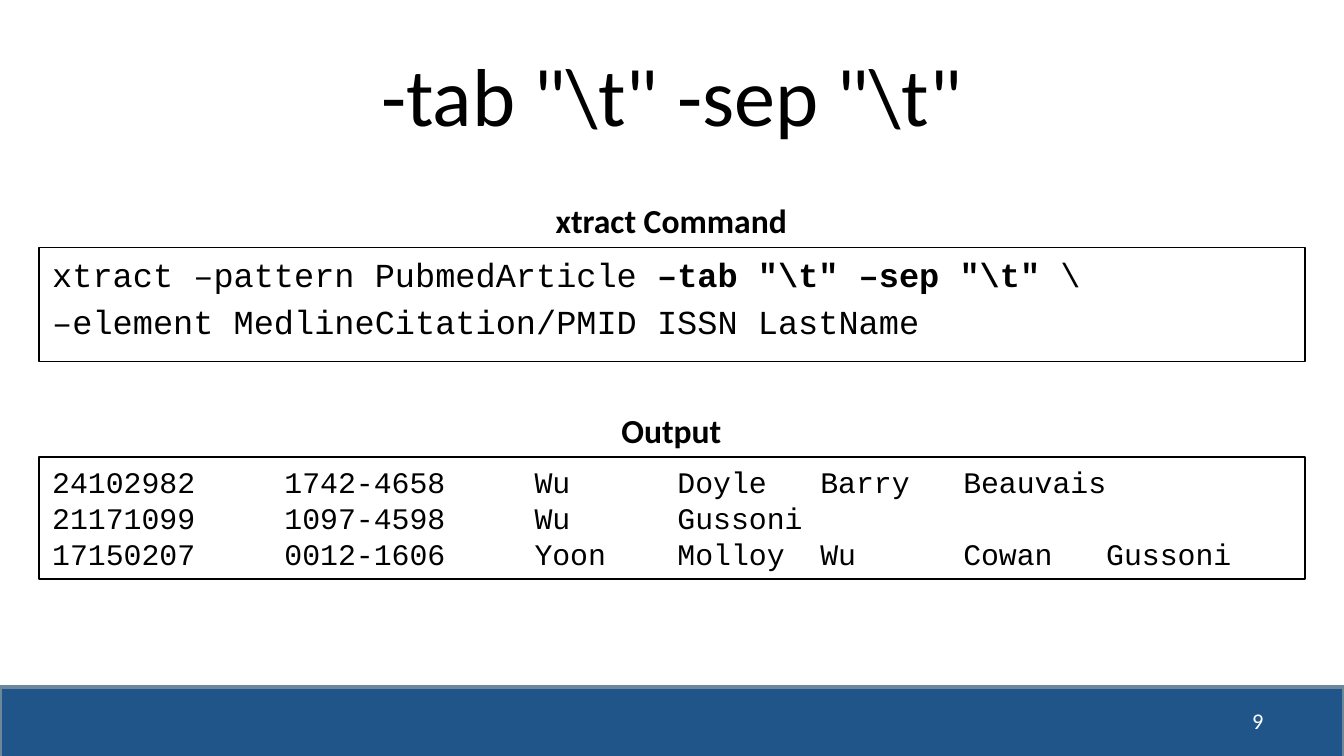
"""Build the slide that shows an xtract command and its tab-separated output."""
from dataclasses import dataclass

from lxml import etree
from pptx import Presentation
from pptx import util as u
from pptx.dml.color import RGBColor
from pptx.enum import shapes, text
from pptx.oxml.ns import qn

W = 10
H = W * 9 / 16
MARGIN = 0.29
BLACK, WHITE, BLUE, SLATE = "000000", "FFFFFF", "20558A", "6D879B"
SANS, MONO = "Calibri", "Courier New"
ALIGN, ANCHOR = text.PP_ALIGN, text.MSO_ANCHOR
CHAR = 9.57 / 72
COLUMNS = (13, 27, 35, 43, 51, 59)


@dataclass(frozen=True)
class Panel:
    heading: str
    top: float
    height: float
    lines: tuple
    size: int
    fill: str = ""
    gap: float = 0
    tabs: tuple = ()


PANELS = (
    Panel("xtract Command", 1.84, 0.85, (
        (("xtract –pattern PubmedArticle ", False),
         (r'–tab "\t" –sep "\t" ', True), ("\\", False)),
        (("–element MedlineCitation/PMID ISSN LastName", False),),
    ), 18, fill=WHITE, gap=3.6),
    Panel("Output", 3.4, 0.91, tuple((("\t".join(row.split()), False),) for row in (
        "24102982 1742-4658 Wu Doyle Barry Beauvais",
        "21171099 1097-4598 Wu Gussoni",
        "17150207 0012-1606 Yoon Molloy Wu Cowan Gussoni",
    )), 16, tabs=COLUMNS),
)


def rgb(value: str) -> RGBColor:
    return RGBColor.from_string(value)


def box(left: float, top: float, width: float, height: float) -> tuple:
    return tuple(u.Inches(v) for v in (left, top, width, height))


def style(p, size: float, font: str, color: str = BLACK, align=ALIGN.LEFT, bold=None) -> None:
    p.alignment = align
    f = p.font
    f.size, f.name, f.bold = u.Pt(size), font, bold
    f.color.rgb = rgb(color)


def add_rect(s, area: tuple, fill: str, line: str, weight: float):
    sp = s.shapes.add_shape(shapes.MSO_SHAPE.RECTANGLE, *box(*area))
    sp.shadow.inherit = False
    if fill:
        sp.fill.solid()
        sp.fill.fore_color.rgb = rgb(fill)
    else:
        sp.fill.background()
    sp.line.color.rgb = rgb(line)
    sp.line.width = u.Pt(weight)
    return sp


def add_label(s, area: tuple, words: str, size: float, color: str, align, anchor, bold=None) -> None:
    tf = s.shapes.add_textbox(*box(*area)).text_frame
    tf.word_wrap, tf.vertical_anchor = True, anchor
    p = tf.paragraphs[0]
    p.text = words
    style(p, size, SANS, color, align, bold)


def add_tabs(p, columns: tuple) -> None:
    tabs = etree.SubElement(p._p.get_or_add_pPr(), qn("a:tabLst"))
    for column in columns:
        etree.SubElement(tabs, qn("a:tab"), pos=str(u.Inches(column * CHAR)), algn="l")


def add_panel(s, panel: Panel) -> None:
    add_label(s, (3.95, panel.top - 0.4, 2.09, 0.4), panel.heading, 18, BLACK,
              ALIGN.CENTER, ANCHOR.TOP, True)
    area = (MARGIN, panel.top, W - 2 * MARGIN, panel.height)
    tf = add_rect(s, area, panel.fill, BLACK, 0.75).text_frame
    tf.word_wrap, tf.vertical_anchor = True, ANCHOR.TOP
    for i, line in enumerate(panel.lines):
        p = tf.add_paragraph() if i else tf.paragraphs[0]
        if i and panel.gap:
            p.space_before = u.Pt(panel.gap)
        if panel.tabs:
            add_tabs(p, panel.tabs)
        style(p, panel.size, MONO)
        for words, bold in line:
            r = p.add_run()
            r.text = words
            if bold:
                r.font.bold = True


def main() -> None:
    prs = Presentation()
    prs.slide_width, prs.slide_height = u.Inches(W), u.Inches(H)
    s = prs.slides.add_slide(prs.slide_layouts[5])
    title = s.shapes.title
    title.left, title.top, title.width, title.height = box(0.5, 0.23, W - 1, 0.94)
    tf = title.text_frame
    tf.vertical_anchor = ANCHOR.MIDDLE
    tf.text = r'-tab "\t" -sep "\t"'
    style(tf.paragraphs[0], 44, SANS, align=ALIGN.CENTER)
    add_rect(s, (0, 5.11, W, 0.58), BLUE, SLATE, 2)
    add_label(s, (7.17, 5.21, 2.33, 0.3), "9", 12, WHITE, ALIGN.RIGHT, ANCHOR.MIDDLE)
    for panel in PANELS:
        add_panel(s, panel)
    prs.save("out.pptx")


if __name__ == "__main__":
    main()
